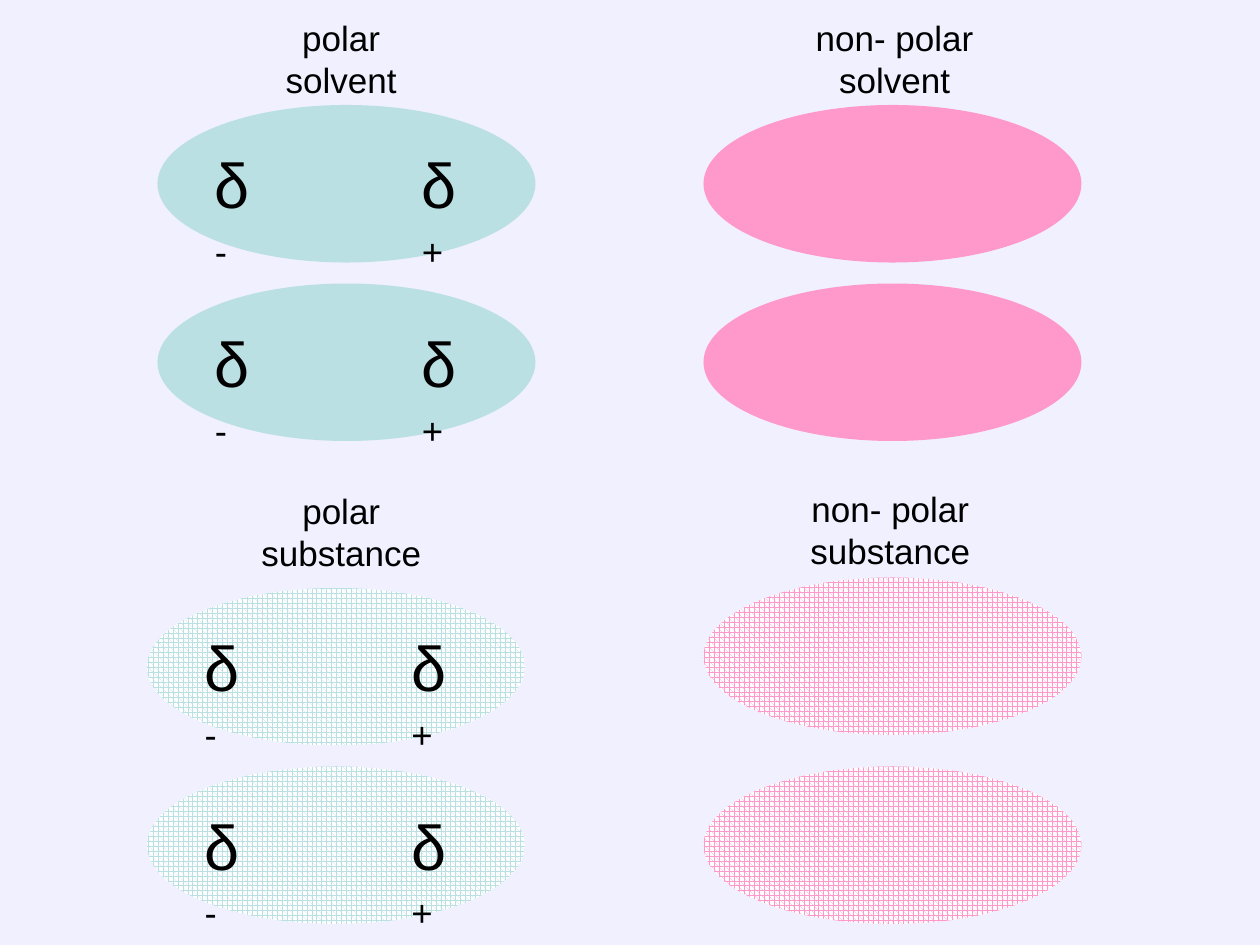
import dataclasses

import pptx
import pptx.dml.color
import pptx.enum.dml
import pptx.enum.text
import pptx.util

# The slide is a grid of 120 columns by 90 rows of square cells.
WIDTH, HEIGHT = pptx.util.Inches(10), pptx.util.Inches(7.5)
CELL = WIDTH / 120
TEAL, PINK, WHITE, BLACK, BACKGROUND = "BBE0E3", "FF99CC", "FFFFFF", "000000", "F0F0FF"
MOLECULE_COLUMNS, MOLECULE_ROWS = 36, 15


@dataclasses.dataclass
class Label:
    column: float
    row: float
    columns: float
    lines: tuple[str, str]


@dataclasses.dataclass
class Family:
    """Two molecules of one kind, stacked under a label."""
    label: Label
    column: float
    rows: tuple[float, float]
    color: str
    polar: bool
    patterned: bool


@dataclasses.dataclass
class Charge:
    column: float  # offset inside the molecule
    columns: float
    sign: str


FAMILIES = [
    Family(Label(26, 1, 13, ("polar", "solvent")), 15, (10, 27), TEAL, True, False),
    Family(Label(76.5, 1, 17.4, ("non- polar", "solvent")), 67, (10, 27), PINK, False, False),
    Family(Label(23.7, 46, 17.6, ("polar", "substance")), 14, (56, 73), TEAL, True, True),
    Family(Label(76, 45.8, 17.6, ("non- polar", "substance")), 67, (55, 73), PINK, False, True),
]
CHARGES = [Charge(4.3, 6.7, "-"), Charge(24, 7.7, "+")]


def rgb(color: str) -> pptx.dml.color.RGBColor:
    return pptx.dml.color.RGBColor.from_string(color)


def grid(*cells: float) -> list[int]:
    return [round(cell * CELL) for cell in cells]


def add_run(paragraph, text: str, size: float):
    run = paragraph.add_run()
    run.text = text
    for name, value in {"name": "Arial", "size": pptx.util.Pt(size)}.items():
        setattr(run.font, name, value)
    run.font.color.rgb = rgb(BLACK)
    return run


def add_text_frame(shapes, place: list[int], wrap: bool):
    frame = shapes.add_textbox(*place).text_frame
    settings = {
        "word_wrap": wrap,
        "auto_size": pptx.enum.text.MSO_AUTO_SIZE.SHAPE_TO_FIT_TEXT,
    }
    for name, value in settings.items():
        setattr(frame, name, value)
    return frame


def add_label(shapes, label: Label) -> None:
    frame = add_text_frame(shapes, grid(label.column, label.row, label.columns, 9.2), False)
    for index, line in enumerate(label.lines):
        paragraph = frame.add_paragraph() if index else frame.paragraphs[0]
        paragraph.alignment = pptx.enum.text.PP_ALIGN.CENTER
        add_run(paragraph, line, 20)


def add_charge(shapes, charge: Charge, column: float, row: float) -> None:
    place = grid(column + charge.column, row + 3.3, charge.columns, 8.4)
    paragraph = add_text_frame(shapes, place, True).paragraphs[0]
    add_run(paragraph, "δ", 36)
    sign = add_run(paragraph, charge.sign, 36)
    sign.font._element.set("baseline", "30000")  # superscript


def add_molecule(shapes, family: Family, row: float) -> None:
    if family.polar:
        shapes = shapes.add_group_shape().shapes
    ellipse = shapes.add_shape(
        pptx.enum.shapes.MSO_SHAPE.OVAL,
        *grid(family.column, row, MOLECULE_COLUMNS, MOLECULE_ROWS),
    )
    ellipse.shadow.inherit = False
    ellipse.line.fill.background()
    if family.patterned:
        ellipse.fill.patterned()
        ellipse.fill.pattern = pptx.enum.dml.MSO_PATTERN.SPHERE
        ellipse.fill.fore_color.rgb = rgb(family.color)
        ellipse.fill.back_color.rgb = rgb(WHITE)
    else:
        ellipse.fill.solid()
        ellipse.fill.fore_color.rgb = rgb(family.color)
    if family.polar:
        for charge in CHARGES:
            add_charge(shapes, charge, family.column, row)


def main() -> None:
    presentation = pptx.Presentation()
    presentation.slide_width, presentation.slide_height = WIDTH, HEIGHT
    slide = presentation.slides.add_slide(presentation.slide_layouts[6])
    slide.background.fill.solid()
    slide.background.fill.fore_color.rgb = rgb(BACKGROUND)

    # Solvents in the upper half, substances in the lower half
    for family in FAMILIES:
        for row in family.rows:
            add_molecule(slide.shapes, family, row)
        add_label(slide.shapes, family.label)
    presentation.save("out.pptx")


if __name__ == "__main__":
    main()
